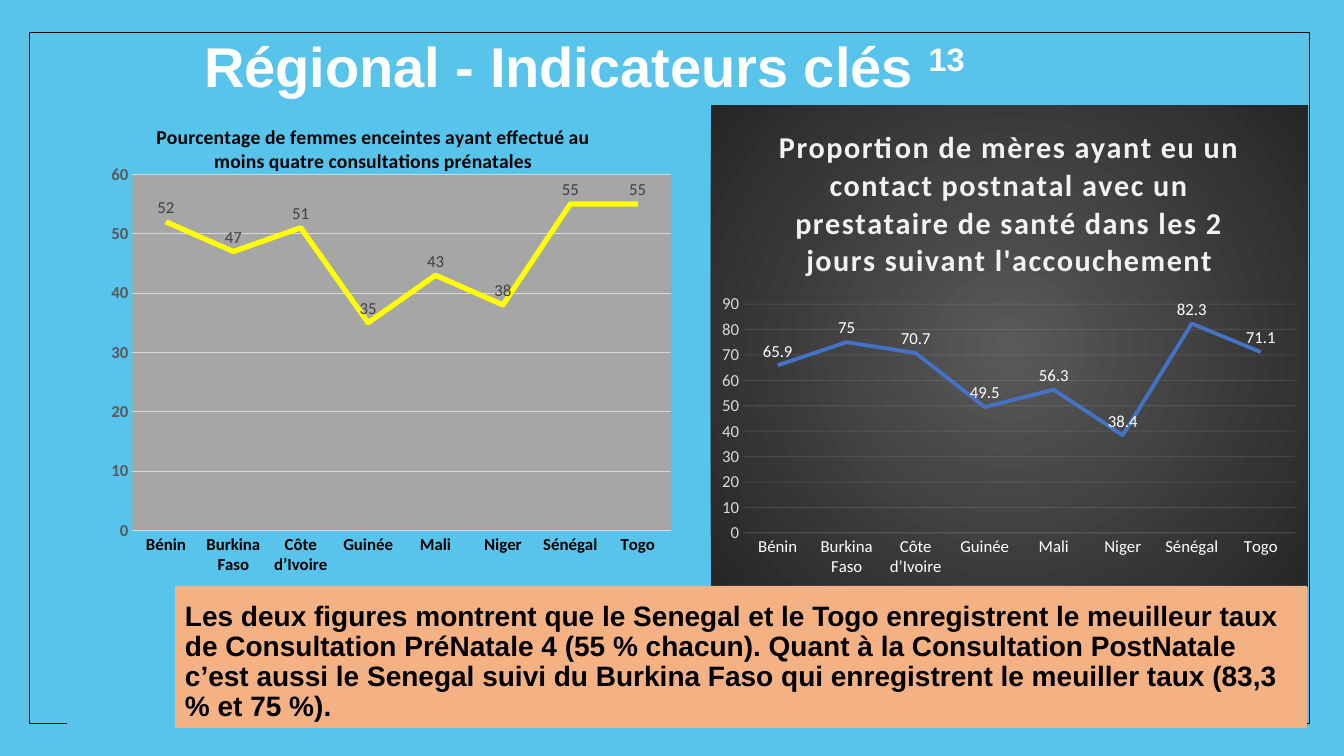
from lxml import etree
from pptx import Presentation
from pptx import util as u
from pptx.chart.data import CategoryChartData
from pptx.dml.color import RGBColor
from pptx.enum import chart as ch, shapes, text
from pptx.oxml import parse_xml
from pptx.oxml.ns import nsdecls, qn

SKY = RGBColor(0x58, 0xC3, 0xEB)
PEACH = RGBColor(0xF4, 0xB1, 0x83)
BLACK = RGBColor(0, 0, 0)
WHITE = RGBColor(255, 255, 255)
PALE = RGBColor(0xF2, 0xF2, 0xF2)
SILVER = RGBColor(0xD9, 0xD9, 0xD9)
SLATE = RGBColor(0x59, 0x59, 0x59)
DARK = RGBColor(0x40, 0x40, 0x40)
YELLOW = RGBColor(255, 255, 0)
BLUE = RGBColor(0x44, 0x72, 0xC4)

EMU = 914400 / 100.8


def px(*nums):
    return [round(n * EMU) for n in nums]


def style(font, name, size, color, bold):
    font.name, font.size, font.bold = name, u.Pt(size), bold
    font.color.rgb = color


prs = Presentation()
prs.slide_width, prs.slide_height = px(1344, 756)
slide = prs.slides.add_slide(prs.slide_layouts[5])

# Backdrop, frame and corner patch, with the message box
boxes = []
for area, fill, line in [
    ((0, 0, 1344, 756), SKY, None),
    ((30, 33, 1280, 691), None, BLACK),
    ((67, 679, 115, 77), SKY, None),
    ((175, 586, 1132, 142), PEACH, None),
]:
    box = slide.shapes.add_shape(shapes.MSO_SHAPE.RECTANGLE, *px(*area))
    box.shadow.inherit = False
    if fill is None:
        box.fill.background()
    else:
        box.fill.solid()
        box.fill.fore_color.rgb = fill
    if line is None:
        box.line.fill.background()
    else:
        box.line.color.rgb = line
        box.line.width = u.Pt(0.75)
    boxes.append(box)

# Title, brought in front of the backdrop
title = slide.shapes.title
slide.shapes._spTree.append(title._element)
title.left, title.top, title.width, title.height = px(70, 28, 1029, 77)
frame = title.text_frame
frame.word_wrap = True
frame.auto_size = text.MSO_AUTO_SIZE.NONE
frame.vertical_anchor = text.MSO_ANCHOR.BOTTOM
para = frame.paragraphs[0]
para.text = "Régional - Indicateurs clés "
para.add_run().text = "13"
para.alignment = text.PP_ALIGN.CENTER
para.line_spacing = 0.9
for run in para.runs:
    style(run.font, "Arial", 40, WHITE, True)
para.runs[1]._r.get_or_add_rPr().set("baseline", "30000")

# Line charts
LANDS = ["Bénin", "Burkina Faso", "Côte d’Ivoire", "Guinée",
         "Mali", "Niger", "Sénégal", "Togo"]
CHARTS = [
    dict(left=75, head="Pourcentage de femmes enceintes ayant effectué au "
         "moins quatre consultations prénatales",
         vals=[52, 47, 51, 35, 43, 38, 55, 55], top=60, size=14, ink=BLACK,
         cat=BLACK, val=SLATE, tag=DARK, bold=True, grid=SILVER,
         line=YELLOW, width=3.75, plot=(0.096, 0.144, 0.904, 0.739)),
    dict(left=711, head="Proportion de mères ayant eu un contact postnatal "
         "avec un prestataire de santé dans les 2 jours suivant "
         "l'accouchement",
         vals=[65.9, 75, 70.7, 49.5, 56.3, 38.4, 82.3, 71.1], top=90,
         size=21.6, ink=PALE, cat=WHITE, val=SILVER, tag=WHITE, bold=False,
         grid=PALE, line=BLUE, width=2.75, plot=(0.054, 0.413, 0.925, 0.475)),
]
charts = []
for c in CHARTS:
    data = CategoryChartData()
    data.categories = LANDS
    data.add_series("Series 1", c["vals"])
    chart = slide.shapes.add_chart(
        ch.XL_CHART_TYPE.LINE, *px(c["left"], 105, 597, 482), data).chart
    charts.append(chart)
    chart.has_legend = False
    style(chart.font, "Calibri", 10, BLACK, False)
    chart.has_title = True
    chart.chart_title.include_in_layout = False
    head = chart.chart_title.text_frame.paragraphs[0]
    head.text = c["head"]
    style(head.runs[0].font, "Calibri", c["size"], c["ink"], True)

    cat, val = chart.category_axis, chart.value_axis
    for axis, ink in ((cat, c["cat"]), (val, c["val"])):
        axis.major_tick_mark = axis.minor_tick_mark = ch.XL_TICK_MARK.NONE
        style(axis.tick_labels.font, "Calibri", 12, ink, c["bold"])
    val.minimum_scale, val.maximum_scale, val.major_unit = 0, c["top"], 10
    val.format.line.fill.background()
    for rule in (cat.format.line, val.major_gridlines.format.line):
        rule.color.rgb = c["grid"]
        rule.width = u.Pt(0.75)

    plot = chart.plots[0]
    plot.vary_by_categories = False
    series = plot.series[0]
    series.smooth = False
    series.marker.style = ch.XL_MARKER_STYLE.NONE
    series.format.line.color.rgb = c["line"]
    series.format.line.width = u.Pt(c["width"])
    tags = series.data_labels
    tags.show_value = True
    tags.position = ch.XL_LABEL_POSITION.ABOVE
    style(tags.font, "Calibri", 12, c["tag"], False)

    area = chart._chartSpace.find(".//" + qn("c:plotArea"))
    for old in area.findall(qn("c:layout")):
        area.remove(old)
    layout = etree.Element(qn("c:layout"))
    manual = etree.SubElement(layout, qn("c:manualLayout"))
    keys = ["layoutTarget", "xMode", "yMode", "x", "y", "w", "h"]
    for key, num in zip(keys, ["inner", "edge", "edge", *c["plot"]]):
        etree.SubElement(manual, qn("c:" + key)).set("val", str(num))
    area.insert(0, layout)

# Grey plot area on the left chart
prenatal, postnatal = charts
area = prenatal._chartSpace.find(".//" + qn("c:plotArea"))
area.append(parse_xml(
    f'<c:spPr {nsdecls("c", "a")}><a:solidFill><a:srgbClr val="A6A6A6"/>'
    '</a:solidFill></c:spPr>'))

# Radial dark backdrop, faint rules and spaced title on the right chart
space = postnatal._chartSpace
space.find(qn("c:txPr")).addprevious(parse_xml(
    f'<c:spPr {nsdecls("c", "a")}><a:gradFill><a:gsLst>'
    '<a:gs pos="0"><a:srgbClr val="595959"/></a:gs>'
    '<a:gs pos="100000"><a:srgbClr val="262626"/></a:gs></a:gsLst>'
    '<a:path path="circle"><a:fillToRect l="50000" t="50000" r="50000" '
    'b="50000"/></a:path></a:gradFill><a:ln><a:noFill/></a:ln></c:spPr>'))
for spot in ("c:catAx/c:spPr", "c:majorGridlines/c:spPr"):
    for color in space.xpath(f".//{spot}/a:ln//a:srgbClr"):
        etree.SubElement(color, qn("a:alpha")).set("val", "10000")
head = postnatal.chart_title.text_frame.paragraphs[0]
head.runs[0]._r.get_or_add_rPr().set("spc", "100")

# Message, in front of the charts
note = boxes[-1]
slide.shapes._spTree.append(note._element)
frame = note.text_frame
frame.word_wrap = True
frame.vertical_anchor = text.MSO_ANCHOR.BOTTOM
para = frame.paragraphs[0]
para.text = (
    "Les deux figures montrent que le Senegal et le Togo enregistrent le "
    "meuilleur taux de Consultation PréNatale 4 (55 % chacun). Quant à la "
    "Consultation PostNatale c’est aussi le Senegal suivi du Burkina Faso "
    "qui enregistrent le meuiller taux (83,3 % et 75 %).")
para.alignment = text.PP_ALIGN.LEFT
para.line_spacing = 0.9
style(para.runs[0].font, "Arial", 20, BLACK, True)

prs.save("out.pptx")
